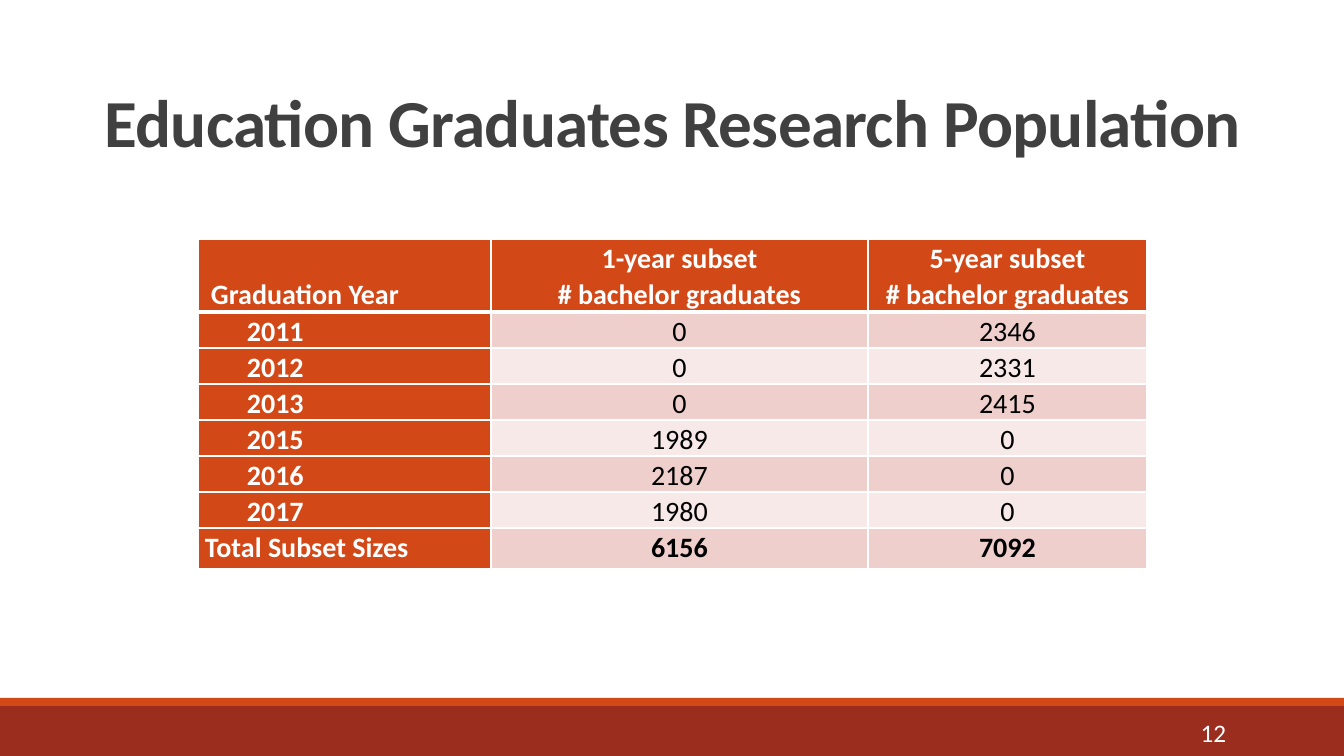
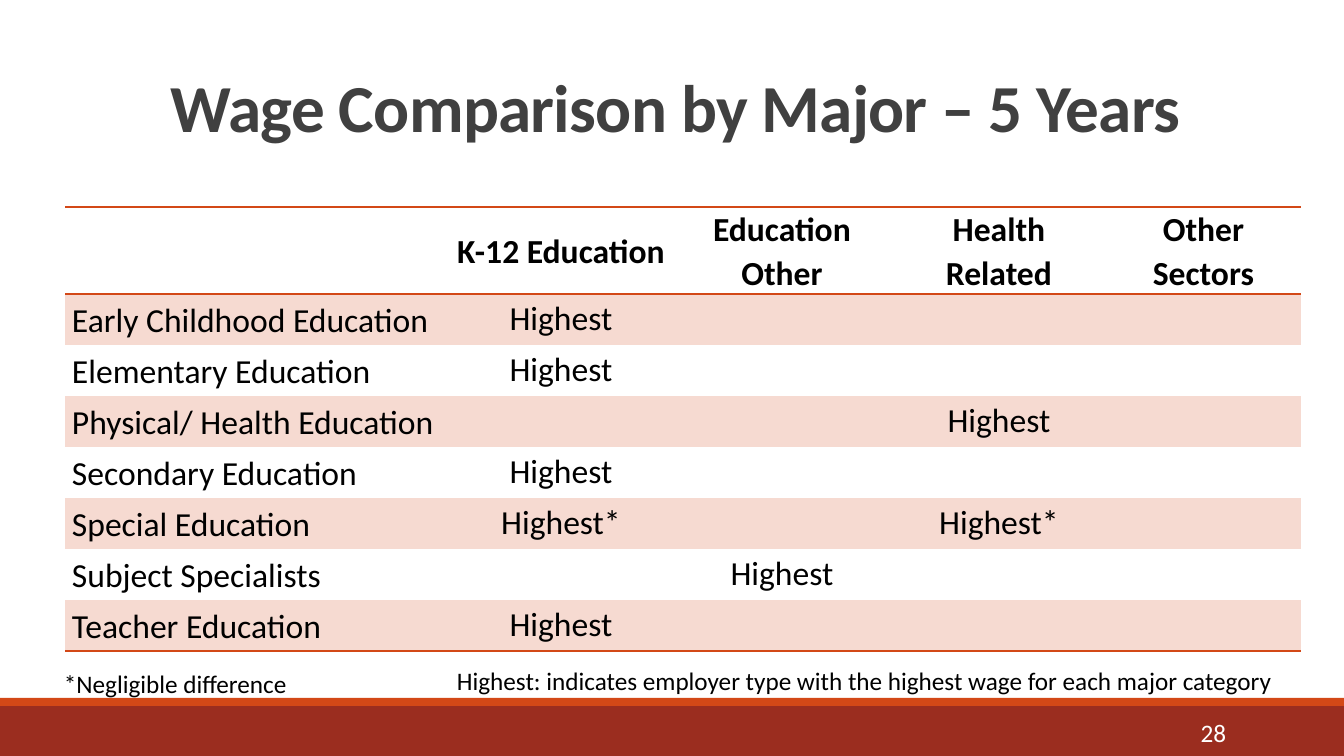
from lxml.etree import SubElement
from pptx import Presentation
from pptx.dml.color import RGBColor
from pptx.enum.shapes import MSO_SHAPE as Shape
from pptx.enum.text import MSO_ANCHOR as Anchor, MSO_AUTO_SIZE as AutoSize, PP_ALIGN as Align
from pptx.oxml.ns import qn
from pptx.util import Pt

# Shared style
EMU_PER_PX = 914400 / 100.8
FONT = "Calibri"
WHITE, BLACK, GREY = "FFFFFF", "000000", "404040"
ORANGE, BRICK = "D34817", "9B2D1F"
ROSE, PALE_ROSE, PEACH = "EFCFCC", "F7E9E8", "F6DAD1"
BANDS = [((0, 706, 1344, 50), BRICK), ((0, 698, 1344, 8), ORANGE)]
NUMBER_BOX = (1092, 712, 144, 40)
CELL_MARGIN = 7
CELL_SPACING = 1.07

# Graduates slide
GRADUATES = {
    "title": "Education Graduates Research Population",
    "title_box": (93, 65, 1159, 101),
    "title_anchor": Anchor.BOTTOM,
    "title_spacing": 0.85,
    "number": "12",
}
GRADUATE_ROWS = [
    ("Graduation Year", "1-year subset\n# bachelor graduates", "5-year subset\n# bachelor graduates"),
    ("2011", "0", "2346"),
    ("2012", "0", "2331"),
    ("2013", "0", "2415"),
    ("2015", "1989", "0"),
    ("2016", "2187", "0"),
    ("2017", "1980", "0"),
    ("Total Subset Sizes", "6156", "7092"),
]
GRADUATE_COLUMNS = [293, 377, 279]
GRADUATE_HEIGHTS = [73] + [36] * 6 + [41]
HEADER_INDENT, YEAR_INDENT = 6, 42

# Wages slide
WAGES = {
    "title": "Wage Comparison by Major – 5 Years",
    "title_box": (121, 31, 1109, 160),
    "title_anchor": Anchor.MIDDLE,
    "title_spacing": 0.9,
    "number": "28",
}
WAGE_ROWS = [
    ("", "K-12 Education", "Education Other", "Health Related", "Other Sectors"),
    ("Early Childhood Education", "Highest", "", "", ""),
    ("Elementary Education", "Highest", "", "", ""),
    ("Physical/ Health Education", "", "", "Highest", ""),
    ("Secondary Education", "Highest", "", "", ""),
    ("Special Education", "Highest*", "", "Highest*", ""),
    ("Subject Specialists", "", "Highest", "", ""),
    ("Teacher Education", "Highest", "", "", ""),
]
WAGE_COLUMNS = [385, 222, 220, 214, 195]
WAGE_HEIGHTS = [87] + [51] * 7
FOOTNOTES = [
    ("*Negligible difference", (54, 663, 272, 40)),
    ("Highest: indicates employer type with the highest wage for each major category",
     (447, 660, 897, 40)),
]


def px(length):
    return round(length * EMU_PER_PX)


def place(box):
    return [px(length) for length in box]


def color(value):
    return RGBColor.from_string(value)


def format_text(frame, size, ink, align=Align.LEFT, bold=False, spacing=1.0):
    for para in frame.paragraphs:
        para.alignment = align
        para.line_spacing = spacing
        font = para.font
        font.name, font.size, font.bold = FONT, Pt(size), bold
        font.color.rgb = color(ink)


def add_text(page, text, box, ink, align=Align.LEFT, anchor=Anchor.TOP):
    frame = page.shapes.add_textbox(*place(box)).text_frame
    frame.word_wrap = True
    frame.vertical_anchor = anchor
    frame.text = text
    format_text(frame, 18, ink, align)


def add_page(deck, content):
    """Add a slide with its bands, title and number."""
    page = deck.slides.add_slide(deck.slide_layouts[5])
    for box, fill in BANDS:
        band = page.shapes.add_shape(Shape.RECTANGLE, *place(box))
        band.shadow.inherit = False
        band.fill.solid()
        band.fill.fore_color.rgb = color(fill)
        band.line.fill.background()

    title = page.shapes.title
    title.left, title.top, title.width, title.height = place(content["title_box"])
    frame = title.text_frame
    frame.text = content["title"]
    frame.word_wrap = True
    frame.auto_size = AutoSize.NONE
    frame.margin_left = frame.margin_right = 0
    frame.vertical_anchor = content["title_anchor"]
    format_text(frame, 48, GREY, Align.CENTER, True, content["title_spacing"])
    for span in frame.paragraphs[0].runs:
        span._r.get_or_add_rPr().set("spc", "-50")

    add_text(page, content["number"], NUMBER_BOX, WHITE, Align.RIGHT, Anchor.MIDDLE)
    return page


def add_grid(page, left, top, widths, heights):
    frame = page.shapes.add_table(len(heights), len(widths),
                                  *place((left, top, sum(widths), sum(heights))))
    table = frame.table
    table.first_row = table.horz_banding = False
    for column, width in zip(table.columns, widths):
        column.width = px(width)
    for row, height in zip(table.rows, heights):
        row.height = px(height)
    return table


def set_borders(cell, edges):
    """Draw the named edges as (colour, points) and clear the others."""
    properties = cell._tc.get_or_add_tcPr()
    for side in "LRTB":
        line = SubElement(properties, qn(f"a:ln{side}"))
        if side in edges:
            ink, points = edges[side]
            line.set("w", str(Pt(points)))
            fill = SubElement(line, qn("a:solidFill"))
            SubElement(fill, qn("a:srgbClr")).set("val", ink)
        else:
            line.set("w", "0")
            SubElement(line, qn("a:noFill"))


def fill_cell(cell, fill):
    if fill:
        cell.fill.solid()
        cell.fill.fore_color.rgb = color(fill)
    else:
        cell.fill.background()


def set_margins(cell, indent=0):
    cell.margin_left, cell.margin_right = px(CELL_MARGIN + indent), px(CELL_MARGIN)
    cell.margin_top = cell.margin_bottom = 0


def add_graduates(deck):
    page = add_page(deck, GRADUATES)
    table = add_grid(page, 198, 239, GRADUATE_COLUMNS, GRADUATE_HEIGHTS)
    last = len(GRADUATE_ROWS) - 1
    for r, row in enumerate(GRADUATE_ROWS):
        for c, text in enumerate(row):
            cell = table.cell(r, c)
            header, label = r == 0, c == 0
            edges = dict.fromkeys("LRTB", (WHITE, 1))
            if header:
                edges["B"] = (WHITE, 3)
            elif r == 1:
                edges["T"] = (WHITE, 3)
            set_borders(cell, edges)
            fill_cell(cell, ORANGE if header or label else ROSE if r % 2 else PALE_ROSE)

            indent = 0
            if header:
                cell.vertical_anchor = Anchor.BOTTOM
                indent = HEADER_INDENT if label else 0
            elif label and r < last:
                cell.vertical_anchor = Anchor.MIDDLE
                indent = YEAR_INDENT
            set_margins(cell, indent)
            cell.text = text
            format_text(cell.text_frame, 20, WHITE if header or label else BLACK,
                        Align.LEFT if label else Align.CENTER,
                        header or label or r == last, CELL_SPACING)


def add_wages(deck):
    page = add_page(deck, WAGES)
    table = add_grid(page, 65, 207, WAGE_COLUMNS, WAGE_HEIGHTS)
    last = len(WAGE_ROWS) - 1
    rule = (ORANGE, 1)
    for r, row in enumerate(WAGE_ROWS):
        edges = {}
        if r <= 1:
            edges["T"] = rule
        if r in (0, last):
            edges["B"] = rule
        for c, text in enumerate(row):
            cell = table.cell(r, c)
            header, label = r == 0, c == 0
            set_borders(cell, edges)
            fill_cell(cell, PEACH if r % 2 else None)
            cell.vertical_anchor = Anchor.MIDDLE
            if header or label:
                set_margins(cell)
            cell.text = text
            format_text(cell.text_frame, 24, BLACK,
                        Align.LEFT if label else Align.CENTER, header,
                        CELL_SPACING if header or label else 1.0)
    for text, box in FOOTNOTES:
        add_text(page, text, box, BLACK)


def main():
    deck = Presentation()
    deck.slide_width, deck.slide_height = px(1344), px(756)
    add_graduates(deck)
    add_wages(deck)
    deck.save("out.pptx")


if __name__ == "__main__":
    main()
